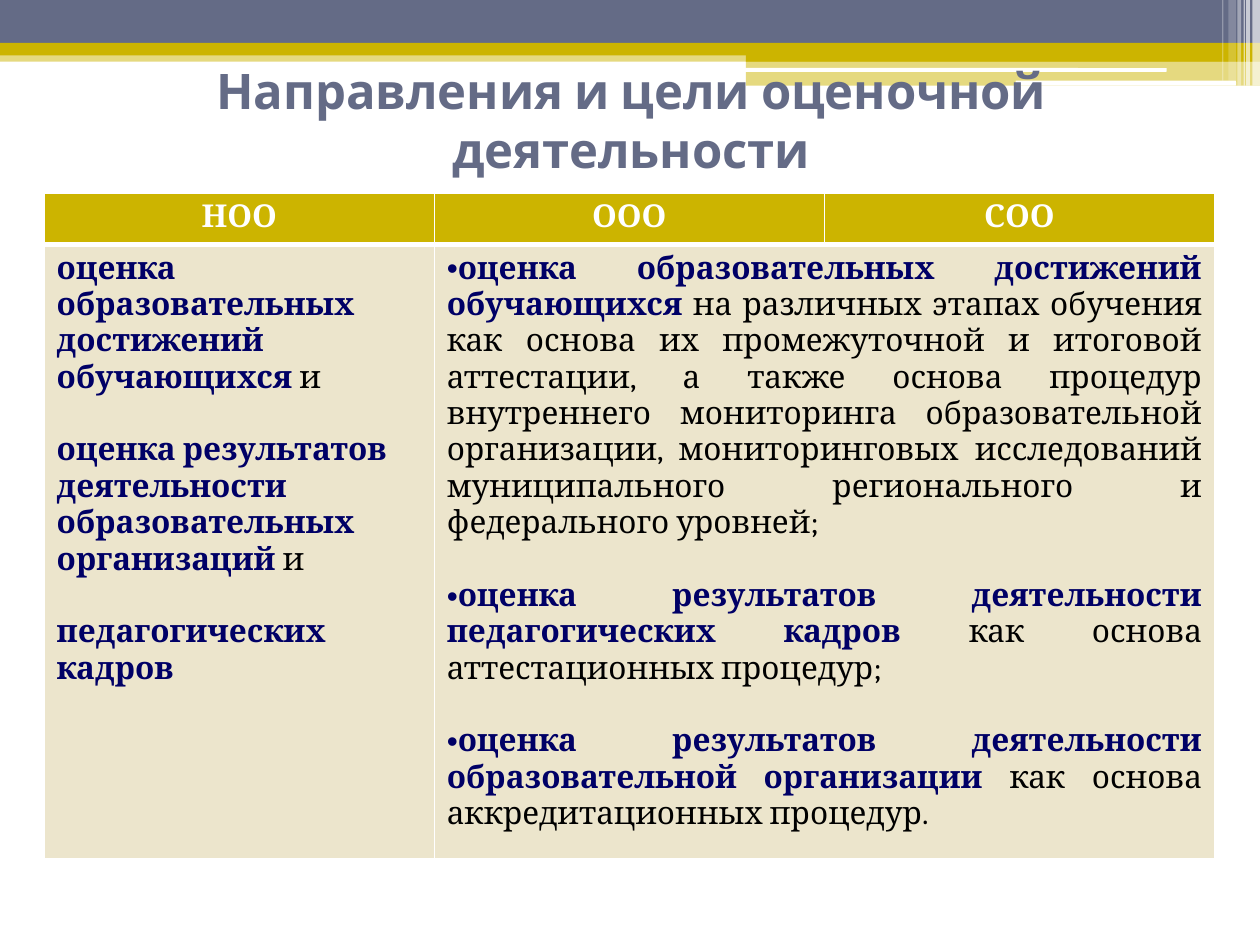
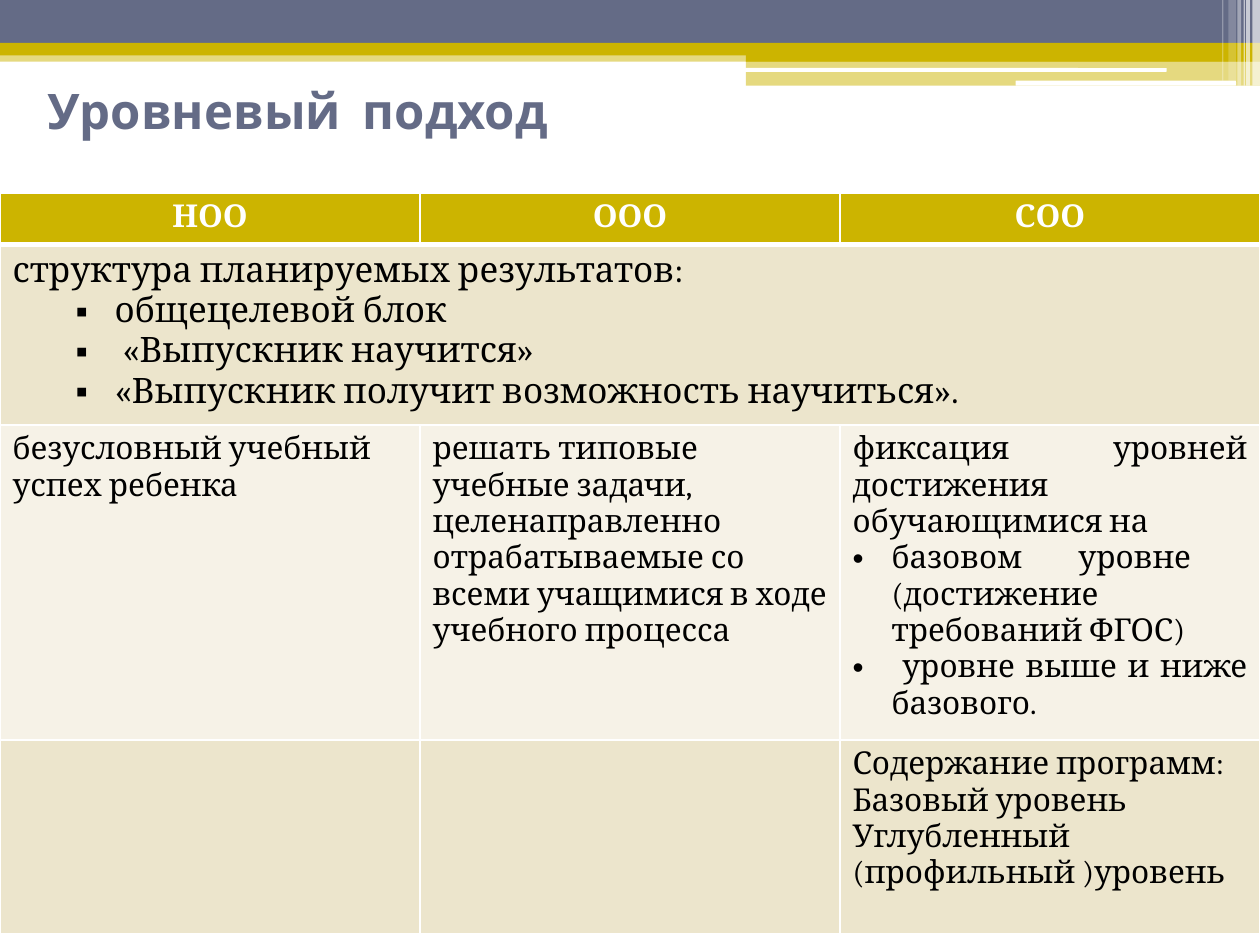
"""Two slides on assessment: its directions and goals, and the level-based approach."""
from lxml import etree
from pptx import Presentation
from pptx.dml.color import RGBColor
from pptx.enum.shapes import MSO_SHAPE
from pptx.enum.text import MSO_ANCHOR, PP_ALIGN
from pptx.oxml.ns import qn
from pptx.util import Inches, Pt

RECT, ROUND = MSO_SHAPE.RECTANGLE, MSO_SHAPE.ROUNDED_RECTANGLE
LEFT, CENTER, JUSTIFY = PP_ALIGN.LEFT, PP_ALIGN.CENTER, PP_ALIGN.JUSTIFY

COLORS = {
    "slate": "646B86", "gold": "CCB400", "white": "FFFFFF", "navy": "000066",
    "black": "000000", "sand": "ECE5CC", "cream": "F6F2E7",
}
TITLE_FONT, BODY_FONT = "Cabin", "Cambria"
LEVELS = ["НОО", "ООО", "СОО"]
HEADER_H = 0.41
TABLE_TOP = 1.53
BLANK_LINE = 20.8

# left, top, width, height, preset, colour, opacity in percent
BANDS = [
    (0, 0.4, 10, 0.09, RECT, "gold", 50),
    (0, 0, 10, 0.34, RECT, "slate", 100),
    (0, 0.34, 10, 0.1, RECT, "gold", 100),
    (5.92, 0.39, 4.08, 0.1, RECT, "gold", 100),
    (5.92, 0.48, 4.08, 0.2, RECT, "gold", 50),
    (5.91, 0.54, 3.35, 0.03, ROUND, "white", 100),
    (8.06, 0.64, 1.75, 0.04, ROUND, "white", 100),
] + [(x, 0, w, h, RECT, "white", opacity) for x, w, h, opacity in [
    (9.94, 0.06, 0.68, 65), (9.89, 0.03, 0.68, 65), (9.87, 0.01, 0.68, 60),
    (9.82, 0.03, 0.68, 40), (9.75, 0.06, 0.64, 20), (9.7, 0.01, 0.64, 30),
]]


def para(*runs, align=LEFT, size=18, bullet=None, margin=0, indent=0, before=0):
    return dict(runs=runs, align=align, size=size, bullet=bullet,
                margin=margin, indent=indent, before=before)


def key(text):
    return text, "navy", True


def plain(text):
    return text, "black", False


def goal(name, purpose, before=BLANK_LINE):
    return para(key(name), plain(purpose), align=JUSTIFY, bullet="•", before=before)


def block(text):
    return para(plain(text), size=20, bullet="▪", margin=0.81, indent=-0.31)


def level(text):
    return para(plain(text), align=JUSTIFY, bullet="•", margin=0.31, indent=-0.31)


SLIDES = [
    dict(
        title="Направления и цели оценочной деятельности",
        title_at=(0.51, 0.36), title_align=CENTER, left=0.35, width=9.29,
        rows=[dict(height=4.7, fill="sand", merge=(1, 2), cells=[
            [
                para(key("оценка образовательных достижений обучающихся "), plain("и")),
                para(key("оценка результатов деятельности образовательных организаций"),
                     plain(" и"), before=BLANK_LINE),
                para(key("педагогических кадров"), before=BLANK_LINE),
            ],
            [
                goal("оценка образовательных достижений обучающихся ",
                     "на различных этапах обучения как основа их промежуточной и итоговой "
                     "аттестации, а также основа процедур внутреннего мониторинга "
                     "образовательной организации, мониторинговых исследований "
                     "муниципального регионального и федерального уровней;", before=0),
                goal("оценка результатов деятельности педагогических кадров",
                     " как основа аттестационных процедур;"),
                goal("оценка результатов деятельности образовательной организации",
                     " как основа аккредитационных процедур."),
            ],
        ])],
    ),
    dict(
        title="Уровневый  подход",
        title_at=(0.28, 0.29), title_align=LEFT, left=0, width=10,
        rows=[
            dict(height=1.37, fill="sand", merge=(0, 2), cells=[[
                para(plain("структура планируемых результатов:"), size=20,
                     margin=0.31, indent=-0.31),
                block("общецелевой блок"),
                block(" «Выпускник научится»"),
                block("«Выпускник получит возможность научиться»."),
            ]]),
            dict(height=2.41, fill="cream", cells=[
                [para(plain("безусловный учебный успех ребенка"))],
                [para(plain("решать типовые учебные задачи, целенаправленно отрабатываемые "
                            "со всеми учащимися в ходе учебного процесса"))],
                [
                    para(plain("фиксация уровней достижения обучающимися на "), align=JUSTIFY),
                    level("базовом уровне  (достижение требований ФГОС)"),
                    level(" уровне выше и ниже базового. "),
                ],
            ]),
            dict(height=1.54, fill="sand", cells=[[], [], [
                para(plain("Содержание программ: Базовый уровень")),
                para(plain("Углубленный  (профильный )уровень")),
            ]]),
        ],
    ),
]


def rgb(name):
    return RGBColor.from_string(COLORS[name])


def style_run(r, font, size, color, bold):
    r.font.name, r.font.size, r.font.bold = font, Pt(size), bold
    r.font.color.rgb = rgb(color)


def add_bands(s):
    for x, y, w, h, preset, color, opacity in BANDS:
        sp = s.shapes.add_shape(preset, Inches(x), Inches(y), Inches(w), Inches(h))
        sp.shadow.inherit = False
        sp.line.fill.background()
        sp.fill.solid()
        sp.fill.fore_color.rgb = rgb(color)
        if opacity < 100:
            clr = sp.fill._xPr.find(qn("a:solidFill"))[0]
            etree.SubElement(clr, qn("a:alpha"), val=str(opacity * 1000))


def add_title(s, text, at, align):
    sp = s.shapes.add_textbox(Inches(at[0]), Inches(at[1]), Inches(9), Inches(1.17))
    tf = sp.text_frame
    tf.word_wrap = True
    tf.vertical_anchor = MSO_ANCHOR.MIDDLE
    tf.text = text
    p = tf.paragraphs[0]
    p.alignment = align
    style_run(p.runs[0], TITLE_FONT, 28, "slate", True)


def fill_cell(cell, paras):
    tf = cell.text_frame
    for i, item in enumerate(paras):
        p = tf.add_paragraph() if i else tf.paragraphs[0]
        p.alignment = item["align"]
        p.space_before = Pt(item["before"])
        pPr = p._p.get_or_add_pPr()
        pPr.set("marL", str(Inches(item["margin"])))
        pPr.set("indent", str(Inches(item["indent"])))
        if item["bullet"]:
            etree.SubElement(pPr, qn("a:buFont"), typeface="Arial")
            etree.SubElement(pPr, qn("a:buChar"), char=item["bullet"])
        for text, color, bold in item["runs"]:
            r = p.add_run()
            r.text = text
            style_run(r, BODY_FONT, item["size"], color, bold)


def style_cell(cell, fill, bottom=1):
    cell.fill.solid()
    cell.fill.fore_color.rgb = rgb(fill)
    tcPr = cell._tc.get_or_add_tcPr()
    for i, (side, width) in enumerate(zip("LRTB", (1, 1, 1, bottom))):
        ln = etree.Element(qn(f"a:ln{side}"), w=str(Pt(width)))
        solid = etree.SubElement(ln, qn("a:solidFill"))
        etree.SubElement(solid, qn("a:srgbClr"), val=COLORS["white"])
        tcPr.insert(i, ln)


def add_level_table(s, left, width, rows):
    heights = [HEADER_H] + [row["height"] for row in rows]
    table = s.shapes.add_table(len(heights), len(LEVELS), Inches(left), Inches(TABLE_TOP),
                               Inches(width), Inches(sum(heights))).table
    table.horz_banding = False
    for row, height in zip(table.rows, heights):
        row.height = Inches(height)
    for c, name in enumerate(LEVELS):
        cell = table.cell(0, c)
        style_cell(cell, "gold", bottom=3)
        fill_cell(cell, [para((name, "white", True), align=CENTER)])
    for i, row in enumerate(rows, 1):
        for c in range(len(LEVELS)):
            style_cell(table.cell(i, c), row["fill"])
        if "merge" in row:
            first, last = row["merge"]
            table.cell(i, first).merge(table.cell(i, last))
        for c, paras in enumerate(row["cells"]):
            fill_cell(table.cell(i, c), paras)


def main():
    prs = Presentation()
    prs.slide_width, prs.slide_height = Inches(10), Inches(7.5)
    for data in SLIDES:
        s = prs.slides.add_slide(prs.slide_layouts[6])
        add_bands(s)
        add_title(s, data["title"], data["title_at"], data["title_align"])
        add_level_table(s, data["left"], data["width"], data["rows"])
    prs.save("out.pptx")


if __name__ == "__main__":
    main()
